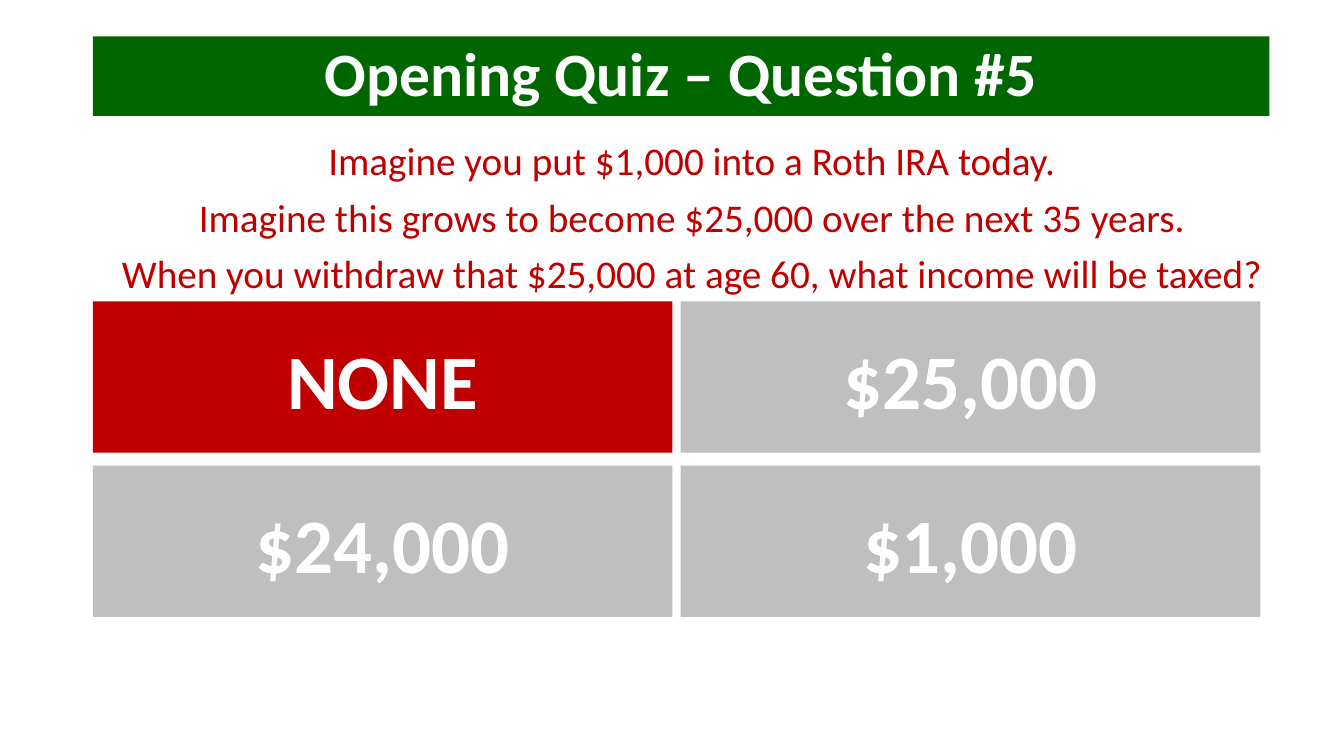
from pptx import Presentation
from pptx.dml.color import RGBColor
from pptx.enum.shapes import MSO_SHAPE
from pptx.enum.text import MSO_ANCHOR, MSO_AUTO_SIZE, PP_ALIGN
from pptx.util import Inches, Pt

COLORS = {"green": "006600", "red": "C00000", "gray": "BFBFBF", "white": "FFFFFF"}
QUESTION = [
    "Imagine you put $1,000 into a Roth IRA today.",
    "Imagine this grows to become $25,000 over the next 35 years.",
    "When you withdraw that $25,000 at age 60, what income will be taxed?",
]
ANSWERS = [("NONE", "red"), ("$25,000", "gray"), ("$24,000", "gray"), ("$1,000", "gray")]


def fill_box(box, color):
    """Give a box a solid fill."""
    box.fill.solid()
    box.fill.fore_color.rgb = RGBColor.from_string(COLORS[color])


def write_text(box, lines, size, color="white", bold=False, anchor=MSO_ANCHOR.MIDDLE, top=0.05, bottom=0.05):
    """Write centred paragraphs into a box."""
    frame = box.text_frame
    frame.word_wrap = True
    frame.auto_size = MSO_AUTO_SIZE.NONE
    frame.vertical_anchor = anchor
    frame.margin_top, frame.margin_bottom = Inches(top), Inches(bottom)
    for index, line in enumerate(lines):
        para = frame.add_paragraph() if index else frame.paragraphs[0]
        para.alignment = PP_ALIGN.CENTER
        para.line_spacing = 0.9
        para.space_before = Pt(10 if index else 0)
        span = para.add_run()
        span.text = line
        span.font.name = "Calibri"
        span.font.size = Pt(size)
        span.font.bold = bold
        span.font.color.rgb = RGBColor.from_string(COLORS[color])


def add_title(page, left, top, width, height):
    """Place the green title bar."""
    title = page.shapes.title
    title.left, title.top = Inches(left), Inches(top)
    title.width, title.height = Inches(width), Inches(height)
    fill_box(title, "green")
    write_text(title, ["Opening Quiz – Question #5"], 44, bold=True)


def add_question(page, left, top, width, height):
    """Place the question text."""
    box = page.shapes.add_textbox(Inches(left), Inches(top), Inches(width), Inches(height))
    write_text(box, QUESTION, 28, color="red", anchor=MSO_ANCHOR.TOP)


def add_answers(page, left, top, width, height, columns=2, column_gap=0.08, row_gap=0.13):
    """Lay the answers out in a grid."""
    rows = len(ANSWERS) // columns
    box_width = (width - column_gap * (columns - 1)) / columns
    box_height = (height - row_gap * (rows - 1)) / rows
    for index, (answer, color) in enumerate(ANSWERS):
        row, column = divmod(index, columns)
        box = page.shapes.add_shape(
            MSO_SHAPE.RECTANGLE,
            Inches(left + column * (box_width + column_gap)),
            Inches(top + row * (box_height + row_gap)),
            Inches(box_width),
            Inches(box_height),
        )
        box.shadow.inherit = False
        box.line.fill.background()
        fill_box(box, color)
        write_text(box, [answer], 55, bold=True, top=0.15, bottom=0)


def main():
    """Build and save the quiz slide."""
    deck = Presentation()
    deck.slide_width, deck.slide_height = Inches(13.33), Inches(7.5)
    page = deck.slides.add_slide(deck.slide_layouts[5])
    add_title(page, 0.92, 0.36, 11.67, 0.79)
    add_question(page, 0.92, 1.36, 11.88, 5.4)
    add_answers(page, 0.92, 2.99, 11.58, 3.13)
    deck.save("out.pptx")


if __name__ == "__main__":
    main()
